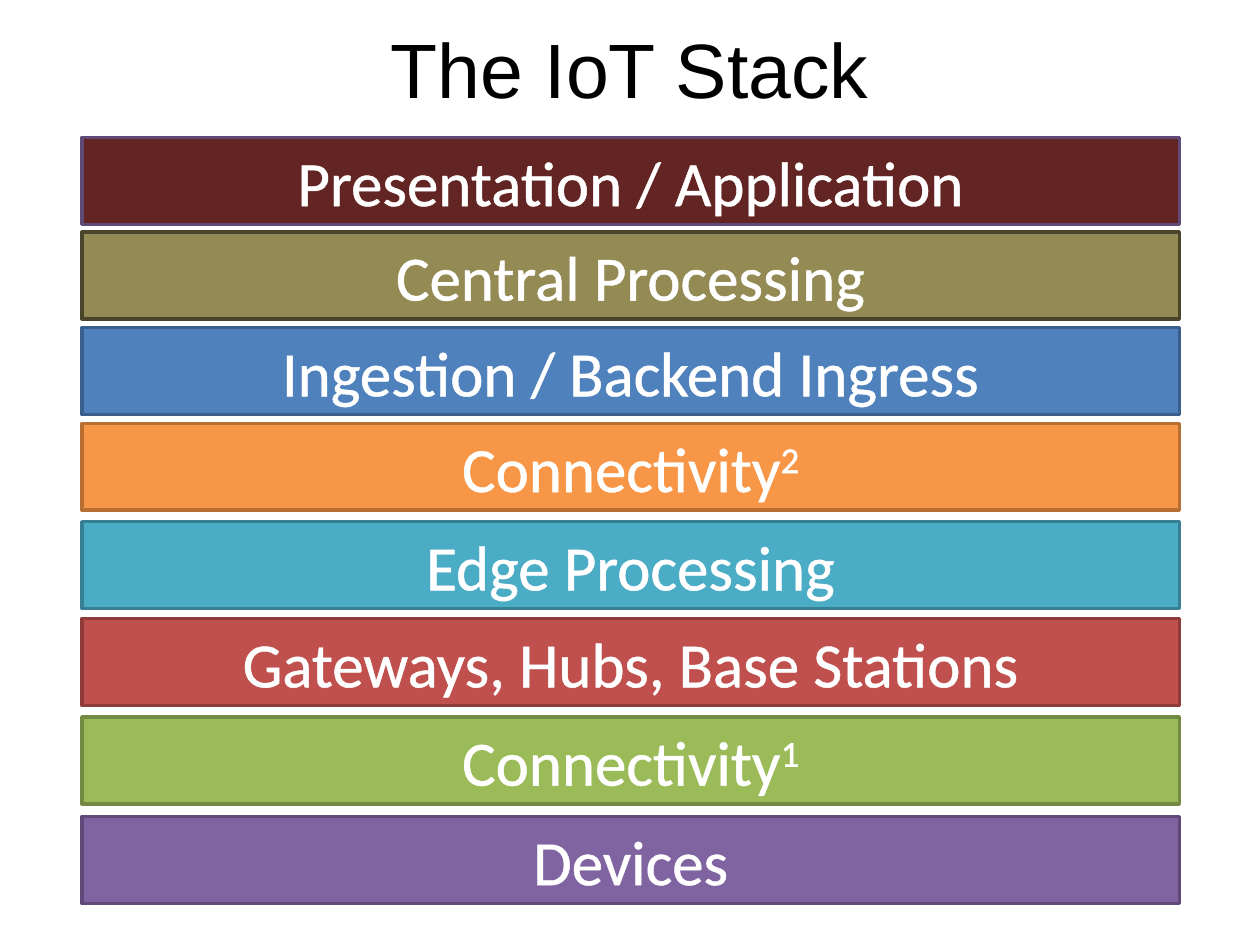
"""Build the IoT stack slide: a title above eight coloured layers."""
from dataclasses import dataclass

from lxml import etree
from pptx import Presentation
from pptx.dml.color import RGBColor
from pptx.enum.shapes import MSO_SHAPE
from pptx.enum.text import MSO_ANCHOR, PP_ALIGN
from pptx.oxml.ns import qn
from pptx.util import Inches, Pt

RECT = MSO_SHAPE.RECTANGLE
MIDDLE = MSO_ANCHOR.MIDDLE
CENTER = PP_ALIGN.CENTER

BLACK = RGBColor(0x00, 0x00, 0x00)
WHITE = RGBColor(0xFF, 0xFF, 0xFF)
MAROON = RGBColor(0x63, 0x25, 0x23)
OLIVE = RGBColor(0x94, 0x8A, 0x54)
DARK_OLIVE = RGBColor(0x4A, 0x45, 0x2A)
BLUE = RGBColor(0x4F, 0x81, 0xBD)
DARK_BLUE = RGBColor(0x3A, 0x5F, 0x8C)
ORANGE = RGBColor(0xF7, 0x96, 0x46)
DARK_ORANGE = RGBColor(0xB7, 0x6F, 0x34)
TEAL = RGBColor(0x4B, 0xAC, 0xC6)
DARK_TEAL = RGBColor(0x37, 0x7F, 0x92)
RED = RGBColor(0xC0, 0x50, 0x4D)
DARK_RED = RGBColor(0x8E, 0x3B, 0x39)
GREEN = RGBColor(0x9B, 0xBB, 0x59)
DARK_GREEN = RGBColor(0x73, 0x8A, 0x42)
PURPLE = RGBColor(0x80, 0x64, 0xA2)
DARK_PURPLE = RGBColor(0x5F, 0x4A, 0x78)

TITLE_FONT = {"name": "Arial", "size": Pt(44)}
LAYER_FONT = {"name": "Calibri", "size": Pt(36)}
TITLE_BOX = {"left": Inches(0.5), "top": Inches(0.08),
             "width": Inches(9), "height": Inches(0.91)}
LAYER_LEFT, LAYER_WIDTH, LAYER_HEIGHT = Inches(0.65), Inches(8.71), Inches(0.69)


@dataclass(frozen=True)
class Layer:
    """One band of the stack."""
    text: str
    top: float
    fill: RGBColor
    line: RGBColor
    superscript: str = ""


LAYERS = [
    Layer("Devices", 6.48, PURPLE, DARK_PURPLE),
    Layer("Connectivity", 5.69, GREEN, DARK_GREEN, "1"),
    Layer("Gateways, Hubs, Base Stations", 4.91, RED, DARK_RED),
    Layer("Edge Processing", 4.14, TEAL, DARK_TEAL),
    Layer("Connectivity", 3.36, ORANGE, DARK_ORANGE, "2"),
    Layer("Ingestion / Backend Ingress", 2.6, BLUE, DARK_BLUE),
    Layer("Central Processing", 1.84, OLIVE, DARK_OLIVE),
    Layer("Presentation / Application", 1.09, MAROON, DARK_PURPLE),
]


def set_attrs(obj: object, values: dict) -> None:
    """Set each named attribute on an object."""
    for name, value in values.items():
        setattr(obj, name, value)


def add_run(p, text: str, font: dict, color: RGBColor):
    """Add a formatted run to a paragraph."""
    r = p.add_run()
    r.text = text
    set_attrs(r.font, font)
    r.font.color.rgb = color
    return r


def outline_text(r, color: RGBColor, width: float) -> None:
    """Give a run's letters a solid outline."""
    ln = etree.Element(qn("a:ln"), w=str(Pt(width)))
    fill = etree.SubElement(ln, qn("a:solidFill"))
    etree.SubElement(fill, qn("a:srgbClr"), val=str(color))
    r._r.get_or_add_rPr().insert(0, ln)


def add_title(s, text: str) -> None:
    """Place and format the slide title."""
    sp = s.shapes.title
    set_attrs(sp, TITLE_BOX)
    tf = sp.text_frame
    tf.vertical_anchor = MIDDLE
    p = tf.paragraphs[0]
    p.alignment = CENTER
    add_run(p, text, TITLE_FONT, BLACK)


def add_layer(s, layer: Layer) -> None:
    """Draw one labelled band of the stack."""
    sp = s.shapes.add_shape(RECT, LAYER_LEFT, Inches(layer.top), LAYER_WIDTH, LAYER_HEIGHT)
    sp.shadow.inherit = False
    sp.fill.solid()
    sp.fill.fore_color.rgb = layer.fill
    sp.line.color.rgb = layer.line
    sp.line.width = Pt(2)
    tf = sp.text_frame
    set_attrs(tf, {"word_wrap": True, "vertical_anchor": MIDDLE})
    p = tf.paragraphs[0]
    p.alignment = CENTER
    outline_text(add_run(p, layer.text, LAYER_FONT, WHITE), WHITE, 1.45)
    if layer.superscript:
        r = add_run(p, layer.superscript, LAYER_FONT, WHITE)
        r._r.get_or_add_rPr().set("baseline", "30000")
        outline_text(r, WHITE, 1.45)


def main() -> None:
    """Build and save the presentation."""
    prs = Presentation()
    set_attrs(prs, {"slide_width": Inches(10), "slide_height": Inches(7.5)})
    s = prs.slides.add_slide(prs.slide_layouts[5])
    add_title(s, "The IoT Stack")
    for layer in LAYERS:
        add_layer(s, layer)
    prs.save("out.pptx")


if __name__ == "__main__":
    main()
